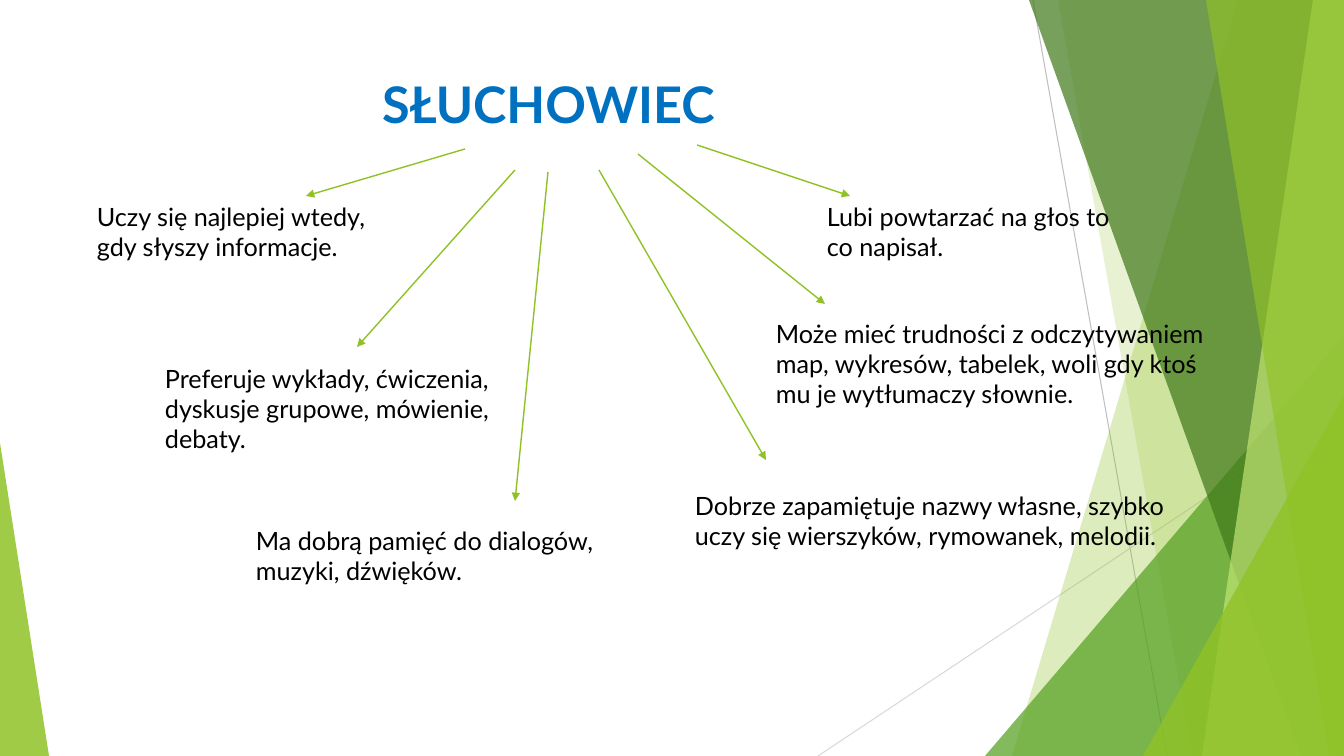
from lxml import etree
from pptx import Presentation
from pptx.dml.color import RGBColor
from pptx.enum.shapes import MSO_CONNECTOR, MSO_SHAPE
from pptx.enum.text import MSO_AUTO_SIZE, PP_ALIGN
from pptx.oxml.ns import qn
from pptx.util import Emu, Pt

PX = 914400 / 100.8
W, H = 1344, 756
FONT = "Lato"
STRAIGHT = MSO_CONNECTOR.STRAIGHT
TRIANGLE = MSO_SHAPE.ISOSCELES_TRIANGLE
FIT_SHAPE = MSO_AUTO_SIZE.SHAPE_TO_FIT_TEXT
LEFT, CENTER = PP_ALIGN.LEFT, PP_ALIGN.CENTER
COLORS = {
    "green": "90C226", "mid": "54A021", "dark": "3F7819", "light": "C0E474",
    "grey": "BFBFBF", "pale": "D9D9D9", "title": "0070C0", "text": "000000",
}


def px(n):
    return Emu(round(n * PX))


def rgb(name):
    return RGBColor.from_string(COLORS[name])


class Canvas:
    """Draws styled elements on one slide, with lengths in px."""

    def __init__(self, slide):
        self.shapes = slide.shapes

    def paint(self, sp, color, opacity):
        sp.shadow.inherit = False
        sp.fill.solid()
        sp.fill.fore_color.rgb = rgb(color)
        sp.line.fill.background()
        clr = sp.fill._xPr.find(".//" + qn("a:srgbClr"))
        etree.SubElement(clr, qn("a:alpha"), val=str(opacity * 1000))

    def panel(self, top_x, bottom_x, color, opacity):
        """Full-height area from a slanted edge to the right side."""
        fb = self.shapes.build_freeform(top_x, 0, scale=PX)
        fb.add_line_segments([(W, 0), (W, H), (bottom_x, H)], close=True)
        self.paint(fb.convert_to_shape(), color, opacity)

    def triangle(self, x, y, w, apex, color, opacity):
        """Triangle standing on the bottom edge of the slide."""
        sp = self.shapes.add_shape(TRIANGLE, px(x), px(y), px(w), px(H - y))
        sp.adjustments[0] = apex
        self.paint(sp, color, opacity)

    def line(self, x1, y1, x2, y2, color, width, arrow=False):
        cxn = self.shapes.add_connector(STRAIGHT, px(x1), px(y1), px(x2), px(y2))
        cxn.line.color.rgb = rgb(color)
        cxn.line.width = Pt(width)
        if arrow:
            etree.SubElement(cxn.line._get_or_add_ln(), qn("a:tailEnd"), type="triangle")
        etree.SubElement(cxn._element.spPr, qn("a:effectLst"))

    def text(self, x, y, w, h, text, size=18, color="text", bold=False, align=LEFT):
        tf = self.shapes.add_textbox(px(x), px(y), px(w), px(h)).text_frame
        tf.word_wrap = True
        tf.auto_size = FIT_SHAPE
        p = tf.paragraphs[0]
        p.text = text
        p.alignment = align
        p.font.name = FONT
        p.font.size = Pt(size)
        p.font.bold = bold
        p.font.color.rgb = rgb(color)


def draw_backdrop(c):
    c.line(1033, 0, 1167, H, "grey", 0.75)
    c.line(W, 406, 818, H, "pale", 0.75)
    c.panel(1238, 1012, "green", 30)
    c.panel(1058, 1192, "green", 20)
    c.triangle(985, 336, 359, 1, "mid", 72)
    c.panel(1029, 1301, "dark", 70)
    c.panel(1313, 1202, "light", 70)
    c.panel(1206, 1329, "green", 65)
    c.triangle(1143, 396, 201, 1, "green", 80)
    c.triangle(0, 443, 49, 0, "green", 85)


TRAITS = [  # text box, arrow, wording
    ((87, 196, 320, 72), (465, 149, 306, 196),
     "Uczy się najlepiej wtedy, gdy słyszy informacje."),
    ((155, 358, 361, 102), (515, 170, 357, 347),
     "Preferuje wykłady, ćwiczenia, dyskusje grupowe, mówienie, debaty."),
    ((246, 520, 373, 72), (548, 172, 515, 501),
     "Ma dobrą pamięć do dialogów, muzyki, dźwięków."),
    ((685, 485, 515, 72), (599, 170, 766, 460),
     "Dobrze zapamiętuje nazwy własne, szybko uczy się wierszyków, rymowanek, melodii."),
    ((766, 313, 463, 102), (638, 154, 825, 304),
     "Może mieć trudności z odczytywaniem map, wykresów, tabelek, "
     "woli gdy ktoś mu je wytłumaczy słownie."),
    ((817, 196, 320, 72), (697, 145, 850, 196),
     "Lubi powtarzać na głos to co napisał."),
]


def main():
    prs = Presentation()
    prs.slide_width, prs.slide_height = px(W), px(H)
    c = Canvas(prs.slides.add_slide(prs.slide_layouts[6]))
    draw_backdrop(c)
    c.text(75, 68, 947, 81, "SŁUCHOWIEC", 36, "title", True, CENTER)
    for box, arrow, wording in TRAITS:
        c.text(*box, wording)
        c.line(*arrow, "green", 1, arrow=True)
    prs.save("out.pptx")


if __name__ == "__main__":
    main()
